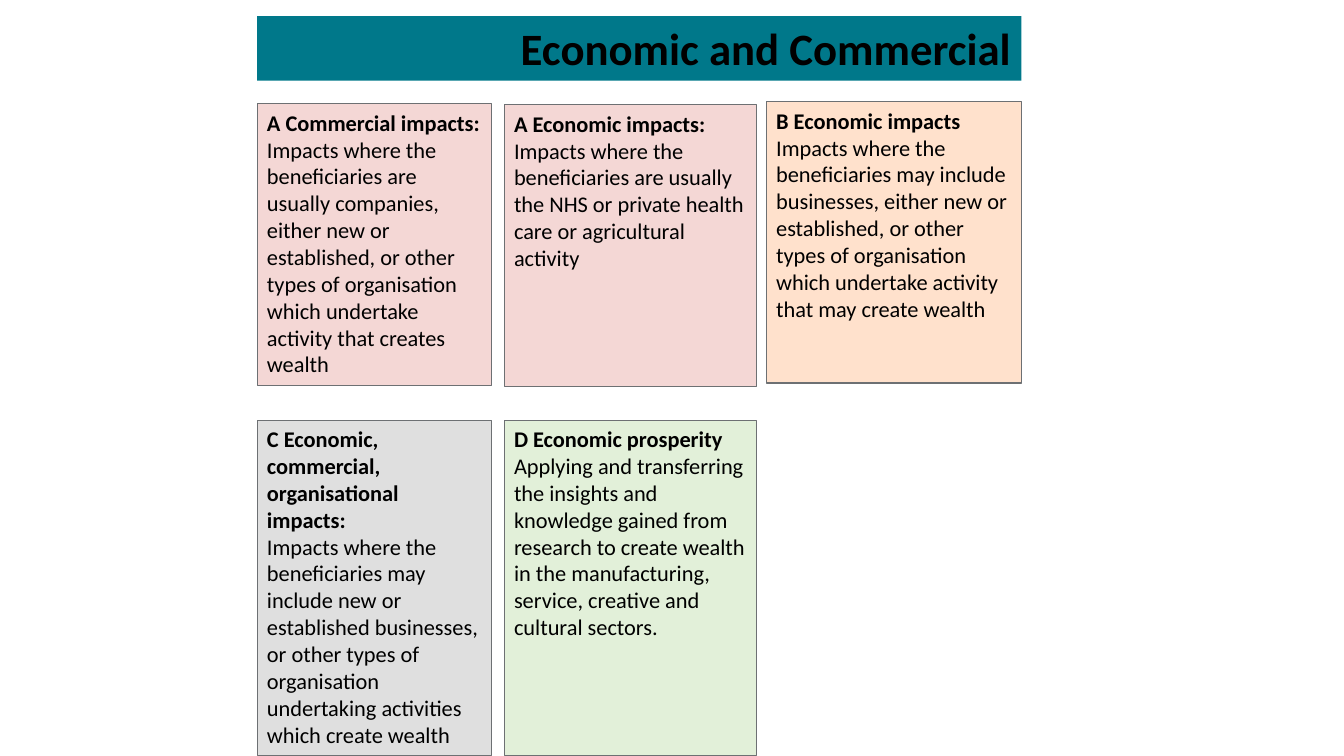
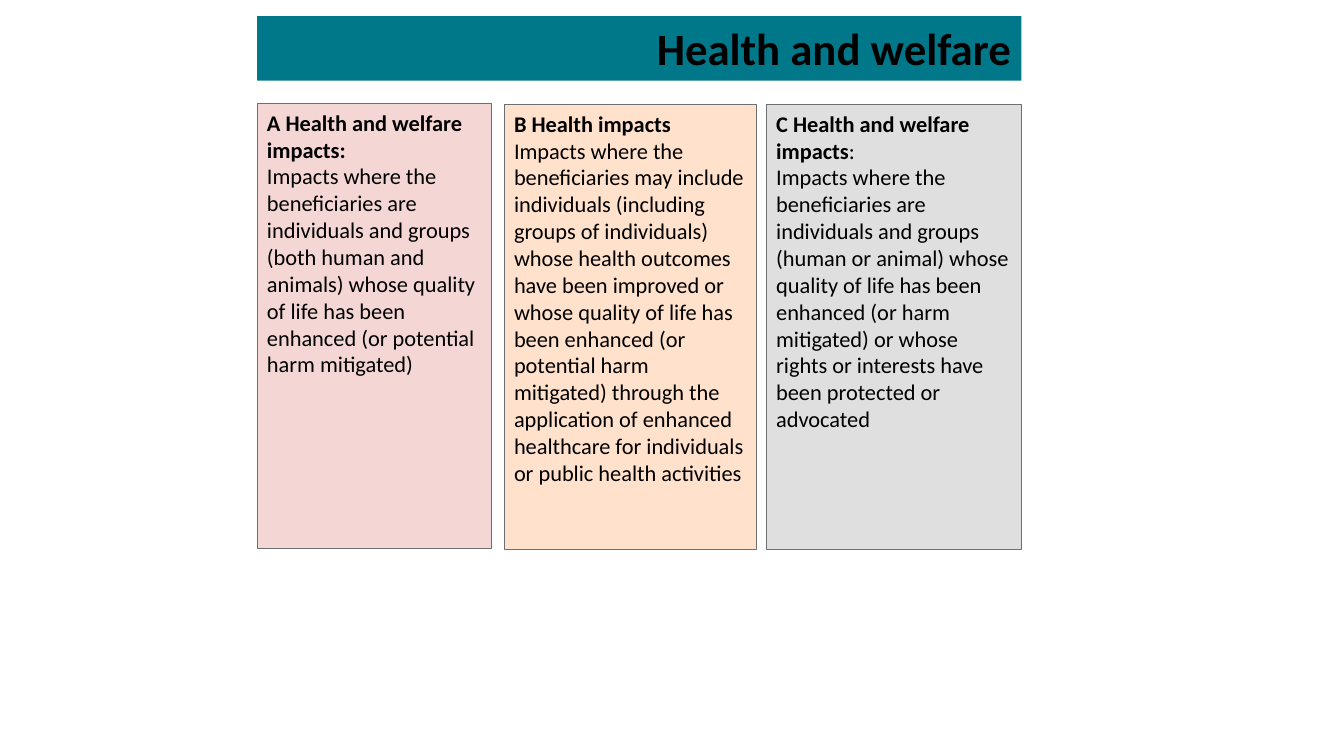
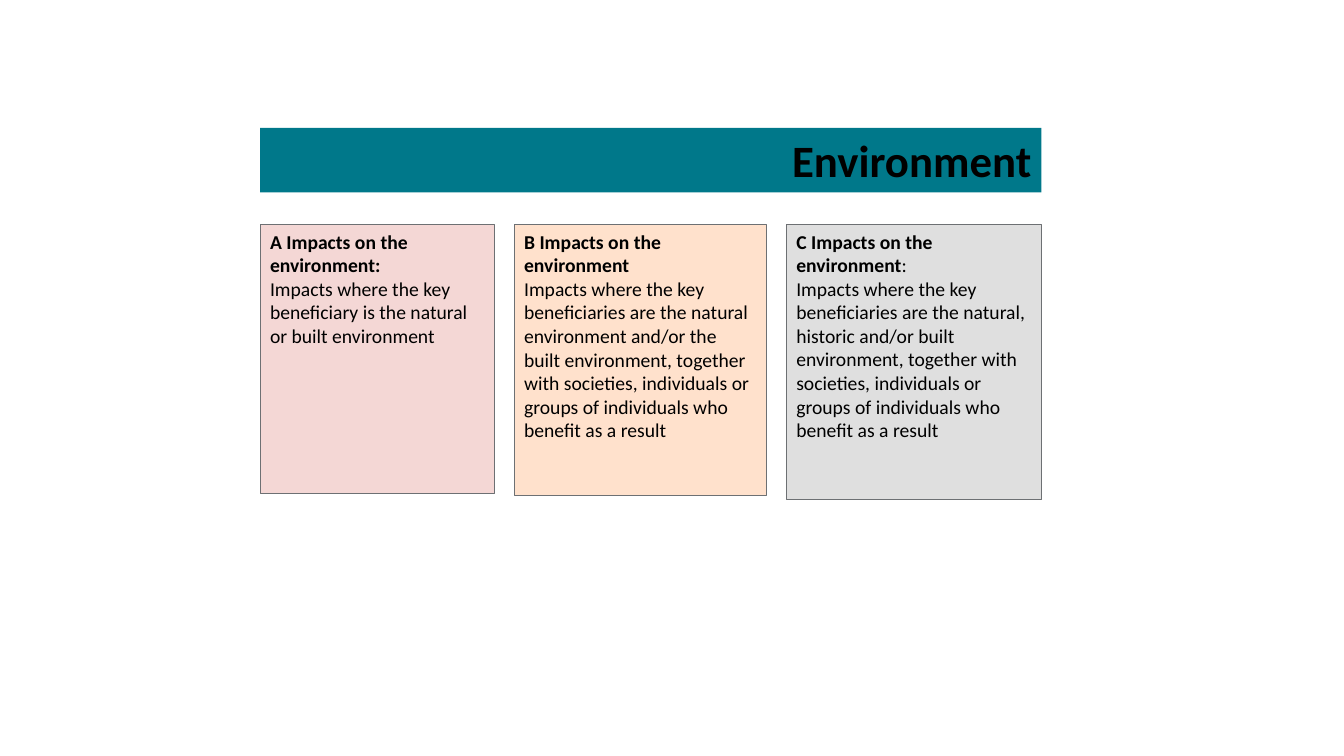
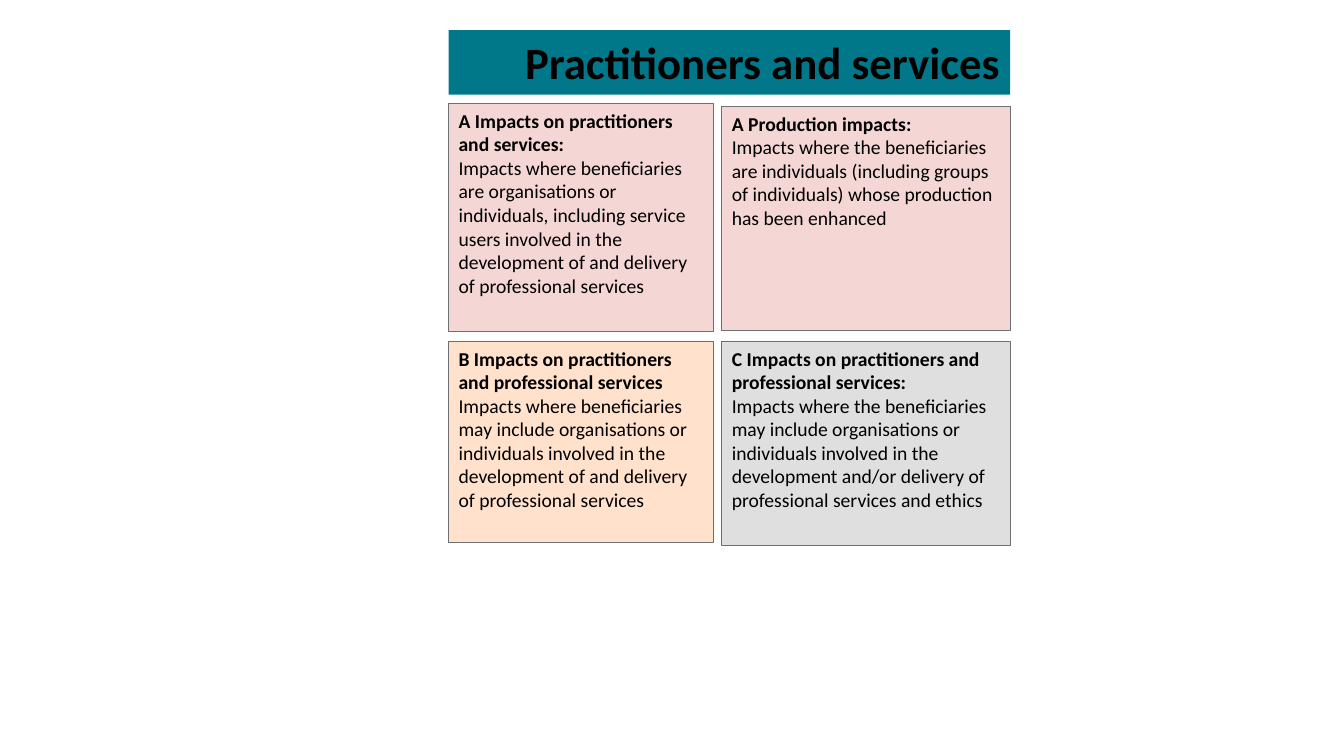
import pptx
import pptx.dml.color
import pptx.enum.shapes
import pptx.enum.text
import pptx.util


def rgb(value):
    return pptx.dml.color.RGBColor.from_string(value)


class Deck:
    """Shared style, the current slide and its grid."""

    FONT, INK, BAND, EDGE = "Calibri", "000000", "00788A", "6D7073"
    PANELS = {"A": "F4D7D5", "B": "FFE1CC", "C": "DFDFDF", "D": "E2F0D9"}
    BAND_HEIGHT = 0.64

    def __init__(self):
        self.prs = pptx.Presentation()
        self.prs.slide_width = pptx.util.Inches(13.33)
        self.prs.slide_height = pptx.util.Inches(7.5)

    def slide(self, title, band_top, cols, rows, size):
        """Start a slide; cols are (left, width), rows are (top, height)."""
        self.s = self.prs.slides.add_slide(self.prs.slide_layouts[6])
        self.cols, self.rows, self.size = cols, rows, size
        left, right = cols[0][0], sum(cols[-1])
        tf = self.box(left, band_top, right - left, self.BAND_HEIGHT, self.BAND)
        tf.text = title
        tf.paragraphs[0].alignment = pptx.enum.text.PP_ALIGN.RIGHT
        self.style(tf.paragraphs[0], 32, True)

    def box(self, left, top, width, height, fill, line=None):
        """Filled rectangle; returns its text frame."""
        sp = self.s.shapes.add_shape(
            pptx.enum.shapes.MSO_SHAPE.RECTANGLE,
            *(pptx.util.Inches(v) for v in (left, top, width, height)))
        sp.shadow.inherit = False
        sp.fill.solid()
        sp.fill.fore_color.rgb = rgb(fill)
        if line:
            sp.line.color.rgb = rgb(line)
            sp.line.width = pptx.util.Pt(0.75)
        else:
            sp.line.fill.background()
        tf = sp.text_frame
        tf.word_wrap = True
        tf.vertical_anchor = pptx.enum.text.MSO_ANCHOR.TOP
        return tf

    def style(self, p, size, bold):
        for r in p.runs:
            r.font.name, r.font.size, r.font.bold = self.FONT, pptx.util.Pt(size), bold
            r.font.color.rgb = rgb(self.INK)

    def card(self, col, row, heading, body, drop=0, extra=0, plain_colon=False):
        """Panel in a grid cell, coloured by the letter its heading starts with."""
        left, width = self.cols[col]
        top, height = self.rows[row]
        tf = self.box(left, top + drop, width, height + extra,
                      self.PANELS[heading[0]], self.EDGE)
        tf.text = heading + "\n" + body
        for p, bold in zip(tf.paragraphs, (True, False)):
            p.alignment = pptx.enum.text.PP_ALIGN.LEFT
            if bold and plain_colon:
                p.add_run().text = ":"
            self.style(p, self.size, bold)
        if plain_colon:
            tf.paragraphs[0].runs[-1].font.bold = False


def main():
    deck = Deck()
    three_cols = [(2.55, 2.33), (5, 2.5), (7.6, 2.53)]

    # Economic and commercial
    deck.slide("Economic and Commercial", 0.16, three_cols,
               [(1.03, 2.79), (4.17, 3.33)], 16)
    deck.card(0, 0, "A Commercial impacts:",
              "Impacts where the beneficiaries are usually companies, either new or "
              "established, or other types of organisation which undertake activity "
              "that creates wealth")
    deck.card(1, 0, "A Economic impacts:",
              "Impacts where the beneficiaries are usually the NHS or private health "
              "care or agricultural activity", drop=0.01)
    deck.card(2, 0, "B Economic impacts",
              "Impacts where the beneficiaries may include businesses, either new or "
              "established, or other types of organisation which undertake activity "
              "that may create wealth", drop=-0.02)
    deck.card(0, 1, "C Economic, commercial, organisational impacts:",
              "Impacts where the beneficiaries may include new or established "
              "businesses, or other types of organisation undertaking activities "
              "which create wealth")
    deck.card(1, 1, "D Economic prosperity",
              "Applying and transferring the insights and knowledge gained from "
              "research to create wealth in the manufacturing, service, creative and "
              "cultural sectors.")

    # Health and welfare
    deck.slide("Health and welfare", 0.16, three_cols, [(1.03, 4.41)], 16)
    deck.card(0, 0, "A Health and welfare impacts:",
              "Impacts where the beneficiaries are individuals and groups (both human "
              "and animals) whose quality of life has been enhanced (or potential "
              "harm mitigated)")
    deck.card(1, 0, "B Health impacts",
              "Impacts where the beneficiaries may include individuals (including "
              "groups of individuals) whose health outcomes have been improved or "
              "whose quality of life has been enhanced (or potential harm mitigated) "
              "through the application of enhanced healthcare for individuals or "
              "public health activities", drop=0.01)
    deck.card(2, 0, "C Health and welfare impacts",
              "Impacts where the beneficiaries are individuals and groups (human or "
              "animal) whose quality of life has been enhanced (or harm mitigated) or "
              "whose rights or interests have been protected or advocated",
              drop=0.01, plain_colon=True)

    # Environment
    deck.slide("Environment", 1.27, [(2.58, 2.33), (5.1, 2.5), (7.8, 2.53)],
               [(2.23, 2.67)], 14)
    deck.card(0, 0, "A Impacts on the environment:",
              "Impacts where the key beneficiary is the natural or built environment")
    deck.card(1, 0, "B Impacts on the environment",
              "Impacts where the key beneficiaries are the natural environment and/or "
              "the built environment, together with societies, individuals or groups "
              "of individuals who benefit as a result", extra=0.02)
    deck.card(2, 0, "C Impacts on the environment",
              "Impacts where the key beneficiaries are the natural, historic and/or "
              "built environment, together with societies, individuals or groups of "
              "individuals who benefit as a result", extra=0.06, plain_colon=True)

    # Practitioners and services
    deck.slide("Practitioners and services", 0.3, [(4.45, 2.63), (7.16, 2.86)],
               [(1.03, 2.26), (3.39, 1.99)], 14)
    deck.card(0, 0, "A Impacts on practitioners and services:",
              "Impacts where beneficiaries are organisations or individuals, including "
              "service users involved in the development of and delivery of "
              "professional services")
    deck.card(1, 0, "A Production impacts:",
              "Impacts where the beneficiaries are individuals (including groups of "
              "individuals) whose production has been enhanced",
              drop=0.03, extra=-0.04)
    deck.card(0, 1, "B Impacts on practitioners and professional services",
              "Impacts where beneficiaries may include organisations or individuals "
              "involved in the development of and delivery of professional services")
    deck.card(1, 1, "C Impacts on practitioners and professional services:",
              "Impacts where the beneficiaries may include organisations or "
              "individuals involved in the development and/or delivery of "
              "professional services and ethics", extra=0.03)

    deck.prs.save("out.pptx")


if __name__ == "__main__":
    main()
